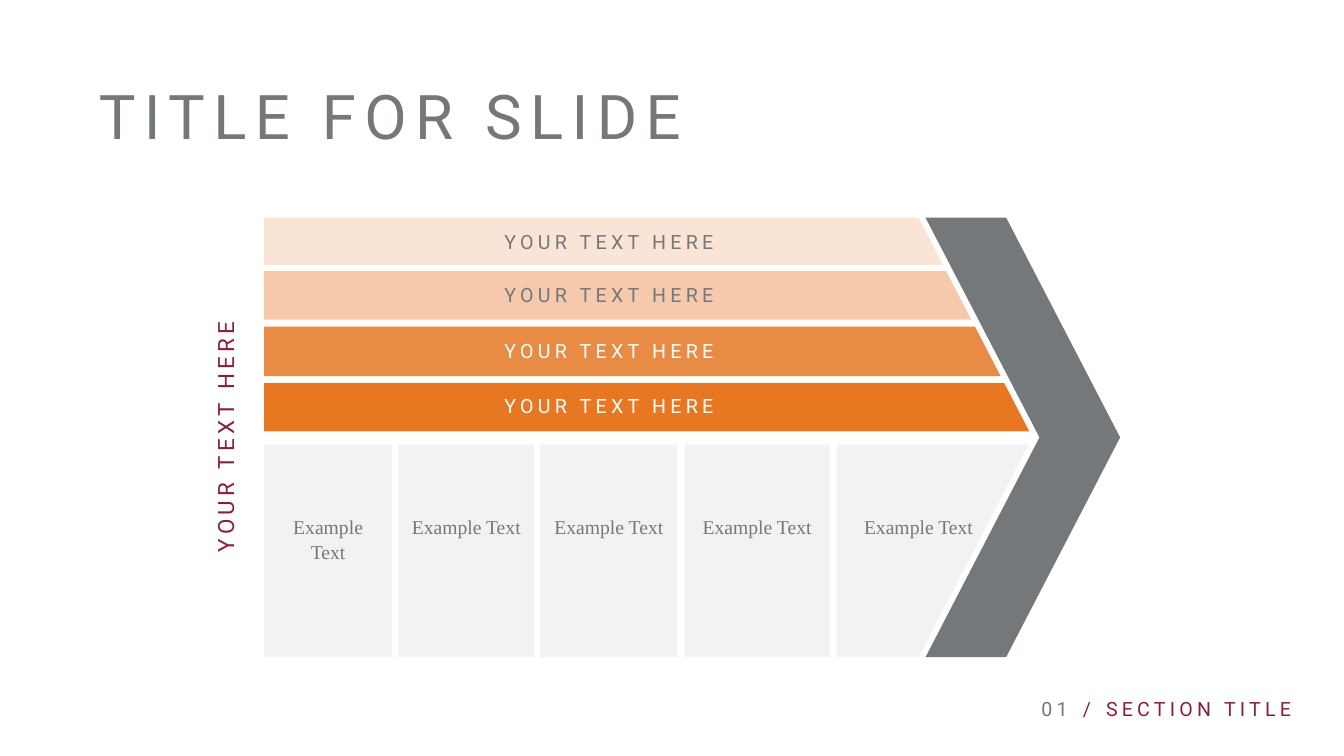
import pptx
import pptx.dml.color
import pptx.enum.shapes
import pptx.enum.text
import pptx.util

Inches = pptx.util.Inches
Pt = pptx.util.Pt
RGBColor = pptx.dml.color.RGBColor
Align = pptx.enum.text.PP_ALIGN
Anchor = pptx.enum.text.MSO_ANCHOR
Fit = pptx.enum.text.MSO_AUTO_SIZE

GRAY = RGBColor(0x75, 0x78, 0x7B)
MAROON = RGBColor(0x86, 0x1F, 0x41)
WHITE = RGBColor(0xFF, 0xFF, 0xFF)
PALE = RGBColor(0xF2, 0xF2, 0xF2)
CREAM = RGBColor(0xFA, 0xE4, 0xD6)
PEACH = RGBColor(0xF6, 0xC9, 0xAD)
AMBER = RGBColor(0xE8, 0x8B, 0x44)
ORANGE = RGBColor(0xE8, 0x77, 0x22)

LEFT, TOP, MID, BASE = 2.62, 2.16, 4.34, 6.52
EDGE = 9.11
SLOPE = 1.13 / (MID - TOP)
ROW = 4.41


def slant(y):
    """Right edge of the body at height y, mirrored about the arrow tip."""
    return EDGE + SLOPE * min(y - TOP, BASE - y)


class Deck:
    sans = "Roboto"
    serif = "Times New Roman"
    label = {"word_wrap": True, "auto_size": Fit.SHAPE_TO_FIT_TEXT}
    head = {"word_wrap": True, "vertical_anchor": Anchor.BOTTOM,
            "margin_left": Inches(0.05), "margin_right": Inches(0.05),
            "margin_top": Inches(0.05), "margin_bottom": Inches(0.05)}

    def __init__(self):
        self.show = pptx.Presentation()
        self.show.slide_width = Inches(13.33)
        self.show.slide_height = Inches(7.5)
        self.slide = self.show.slides.add_slide(self.show.slide_layouts[6])

    def paint(self, shape, color):
        shape.shadow.inherit = False
        shape.fill.solid()
        shape.fill.fore_color.rgb = color
        shape.line.fill.background()

    def rect(self, x, y, w, h, color):
        kind = pptx.enum.shapes.MSO_SHAPE.RECTANGLE
        box = map(Inches, (x, y, w, h))
        self.paint(self.slide.shapes.add_shape(kind, *box), color)

    def poly(self, points, color):
        dots = [(Inches(x), Inches(y)) for x, y in points]
        form = self.slide.shapes.build_freeform(*dots[0])
        form.add_line_segments(dots[1:], close=True)
        self.paint(form.convert_to_shape(), color)

    def text(self, box, words, color, size=14, face=sans, gap=3,
             align=Align.CENTER, lead=None, frame=label, turn=0):
        shape = self.slide.shapes.add_textbox(*map(Inches, box))
        shape.rotation = turn
        for key, value in frame.items():
            setattr(shape.text_frame, key, value)
        para = shape.text_frame.paragraphs[0]
        run = para.add_run()
        run.text = words
        for key, value in {"alignment": align, "line_spacing": lead}.items():
            setattr(para, key, value)
        for key, value in {"name": face, "size": Pt(size)}.items():
            setattr(run.font, key, value)
        run.font.color.rgb = color
        if gap:
            run.font._element.set("spc", str(gap * 100))

    def title(self, box, words, color, **style):
        self.text(box, words, color, frame=self.head, lead=0.9, **style)


def main():
    deck = Deck()
    deck.poly([(11.11, MID), (9.98, TOP), (9.18, TOP), (10.31, MID),
               (9.18, BASE), (9.98, BASE)], GRAY)

    bars = [(2.16, 2.63, 2.23, CREAM, GRAY), (2.69, 3.17, 2.76, PEACH, GRAY),
            (3.24, 3.73, 3.31, AMBER, WHITE), (3.8, 4.28, 3.86, ORANGE, WHITE)]
    for top, base, line, fill, ink in bars:
        deck.poly([(LEFT, top), (slant(top), top),
                   (slant(base), base), (LEFT, base)], fill)
        deck.text((4.21, line, 3.66, 0.34), "YOUR TEXT HERE", ink)

    cells = [(LEFT, 1.27), (3.95, 1.35), (5.36, 1.36), (6.79, 1.44)]
    for x, w in cells:
        deck.rect(x, ROW, w, BASE - ROW, PALE)
    deck.poly([(8.3, ROW), (slant(ROW), ROW), (EDGE, BASE), (8.3, BASE)], PALE)
    for x, w in cells + [(8.3, 1.62)]:
        deck.text((x, 5.04, w, 0.34), "Example Text", GRAY,
                  face=deck.serif, gap=0, lead=Pt(18))

    deck.text((0.87, 4.15, 2.73, 0.37), "YOUR TEXT HERE", MAROON,
              size=16, turn=270)
    deck.title((0.93, 0.84, 8.01, 0.73), "TITLE FOR SLIDE", GRAY,
               size=44, gap=6, align=Align.LEFT)
    deck.title((10.92, 6.75, 2.4, 0.45), "SECTION TITLE", MAROON,
               align=Align.LEFT)
    deck.title((9.86, 6.75, 0.78, 0.45), "01", GRAY, align=Align.RIGHT)
    deck.title((10.6, 6.75, 0.27, 0.45), "/", MAROON, gap=2,
               align=Align.RIGHT)
    deck.show.save("out.pptx")


if __name__ == "__main__":
    main()
